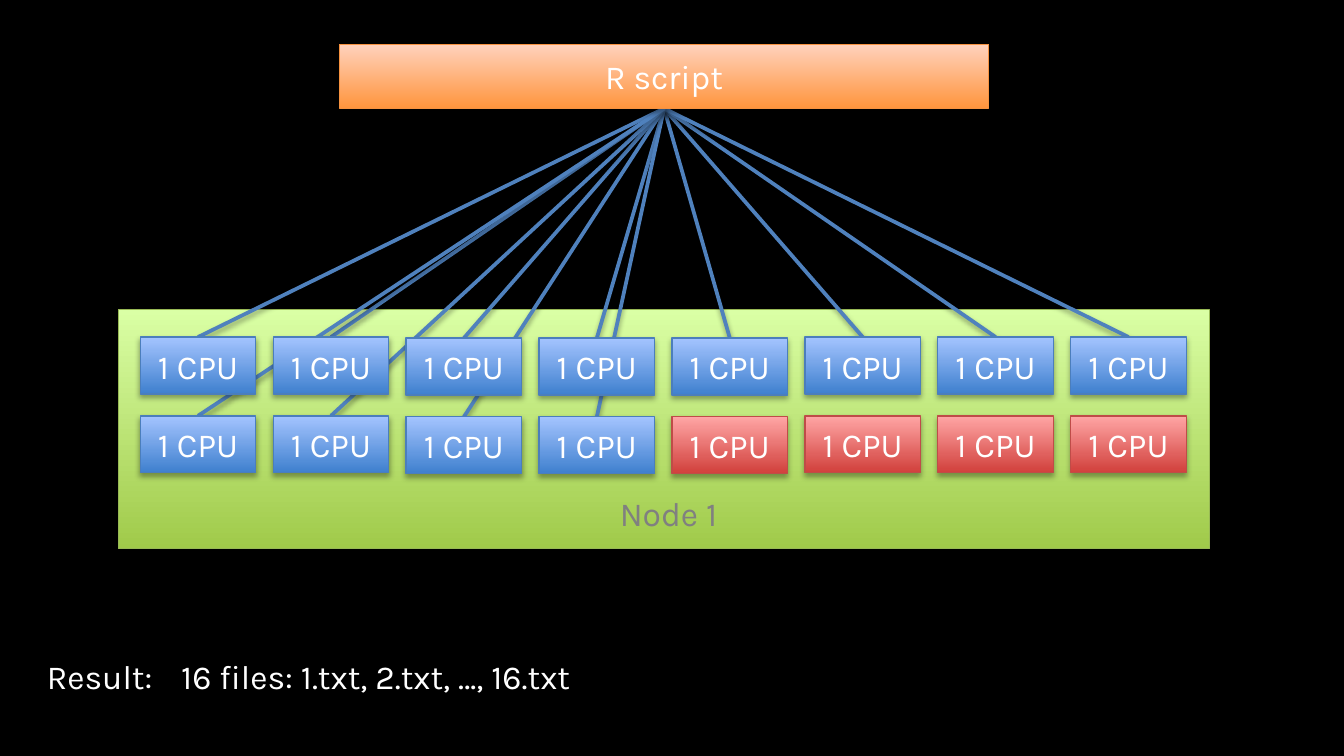
from pptx import Presentation
from pptx.dml.color import RGBColor
from pptx.enum.shapes import MSO_CONNECTOR as Connector, MSO_SHAPE as Shape
from pptx.enum.text import MSO_ANCHOR as Anchor, MSO_AUTO_SIZE as AutoSize, PP_ALIGN as Align
from pptx.oxml import parse_xml
from pptx.oxml.ns import nsdecls
from pptx.util import Inches, Pt

BOTTOM, TOP = 2, 0

# Each scheme: bottom colour, top colour, outline
GREEN = ("A0CA4A", "DAFFA5", "98B955")
ORANGE = ("FF953E", "FFD2BD", "F69240")
BLUE = ("3F80CE", "A4C4FF", "4B7EBC")
RED = ("D1403C", "FFA6A5", "BF4C48")


def color(hex_code):
    return RGBColor.from_string(hex_code)


def grid(units):
    """Convert grid units (100 columns across the slide) to a length."""
    return Inches(units / 10)


def write(frame, text, fill="FFFFFF", size=18, font="Karla", align=Align.LEFT):
    paragraph = frame.paragraphs[0]
    paragraph.alignment = align
    run = paragraph.add_run()
    run.text = text
    run.font.name = font
    run.font.size = Pt(size)
    run.font.color.rgb = color(fill)


def add_shadow(item, opacity, distance, blur=3.1):
    item.element.spPr.append(parse_xml(
        f'<a:effectLst {nsdecls("a")}><a:outerShdw blurRad="{Pt(blur)}" '
        f'dist="{Pt(distance)}" dir="5400000" rotWithShape="0">'
        f'<a:srgbClr val="000000"><a:alpha val="{opacity * 1000}"/></a:srgbClr>'
        '</a:outerShdw></a:effectLst>'))


class Diagram:
    link_color = "4F81BD"
    link_width = 2
    outline_width = 0.75

    def __init__(self, slide, background="000000"):
        self.shapes = slide.shapes
        slide.background.fill.solid()
        slide.background.fill.fore_color.rgb = color(background)

    def box(self, left, top, width, height, scheme, text=None):
        box = self.shapes.add_shape(Shape.RECTANGLE, *map(grid, (left, top, width, height)))
        *gradient, outline = scheme
        box.fill.gradient()
        box.fill.gradient_angle = 90
        for stop, shade in zip(box.fill.gradient_stops, gradient):
            stop.color.rgb = color(shade)
        box.line.color.rgb = color(outline)
        box.line.width = Pt(self.outline_width)
        add_shadow(box, opacity=35, distance=1.8)
        if text:
            box.text_frame.vertical_anchor = Anchor.MIDDLE
            write(box.text_frame, text, align=Align.CENTER)
        return box

    def link(self, source, target):
        """Join two boxes with a line that lies behind the source box."""
        link = self.shapes.add_connector(Connector.STRAIGHT, 0, 0, 0, 0)
        link.begin_connect(source, BOTTOM)
        link.end_connect(target, TOP)
        link.line.color.rgb = color(self.link_color)
        link.line.width = Pt(self.link_width)
        add_shadow(link, opacity=38, distance=1.6)
        source.element.addprevious(link.element)

    def label(self, left, top, width, height, text, **style):
        frame = self.shapes.add_textbox(*map(grid, (left, top, width, height))).text_frame
        frame.word_wrap = False
        frame.auto_size = AutoSize.SHAPE_TO_FIT_TEXT
        write(frame, text, **style)


def main():
    deck = Presentation()
    deck.slide_width, deck.slide_height = grid(100), grid(56.25)
    diagram = Diagram(deck.slides.add_slide(deck.slide_layouts[6]))

    # Node and the script that drives it
    diagram.box(8.8, 23.03, 81.2, 17.8, GREEN)
    script = diagram.box(25.26, 3.3, 48.3, 4.77, ORANGE, "R script")

    # Two rows of eight CPUs; the last four are idle, the middle ones sit a little lower
    cpus = []
    for row in range(2):
        for column in range(8):
            drop = 0.07 if column in (2, 3, 4) else 0
            idle = row == 1 and column >= 4
            cpus.append(diagram.box(10.44 + 9.89 * column, 25.08 + 5.86 * row + drop,
                                    8.6, 4.24, RED if idle else BLUE, "1 CPU"))

    # Links to the CPUs in use: the top row, then the second row from right to left
    for cpu in cpus[:8] + cpus[11:7:-1]:
        diagram.link(script, cpu)

    # Captions
    diagram.label(2.5, 48.34, 46.8, 4.04, "Result:\t16 files: 1.txt, 2.txt, …, 16.txt")
    diagram.label(45.13, 36.2, 9.9, 4.04, "Node 1", fill="808080")

    deck.save("out.pptx")


if __name__ == "__main__":
    main()
